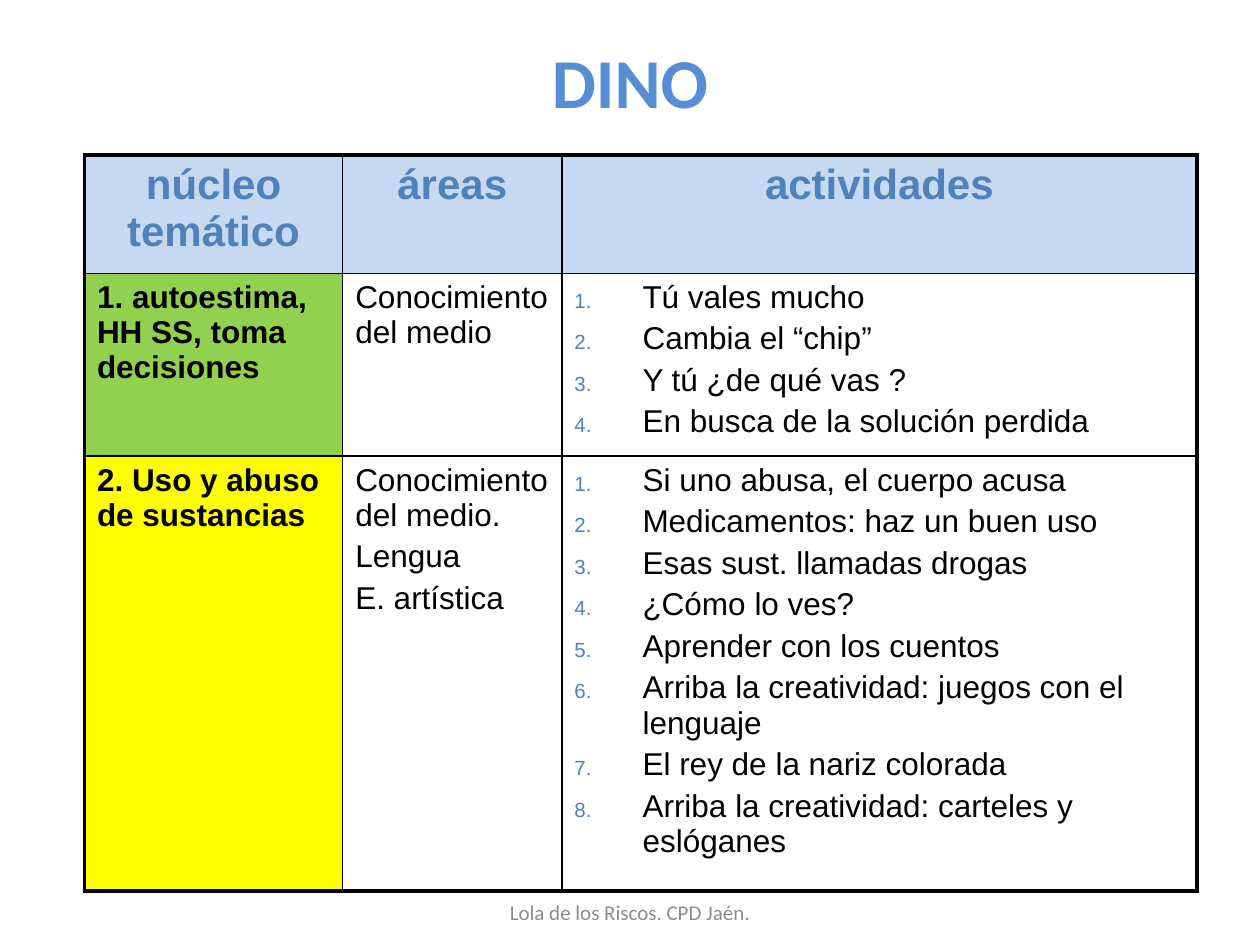
from lxml import etree
from pptx import Presentation
from pptx import util as u
from pptx.dml.color import RGBColor
from pptx.enum import text
from pptx.oxml import ns

WIDTH, HEIGHT = u.Inches(10), u.Inches(7.5)
COLORS = {
    "title": "558ED5", "accent": "4F81BD", "header": "C6D9F1", "green": "92D050",
    "yellow": "FFFF00", "black": "000000", "footer": "8C8C8C",
}
COLUMN_WIDTHS = [2.05, 1.74, 5.04]
ROW_HEIGHTS = [0.94, 1.33, 2.61]
OUTER_LINE, INNER_LINE = 2.25, 1
NUMBER_INDENT = u.Inches(0.54)

HEADERS = ["núcleo temático", "áreas", "actividades"]
# Each topic: name, fill, areas, activities
TOPICS = [
    ("1. autoestima, HH SS, toma decisiones", "green",
     ["Conocimiento del medio"],
     ["Tú vales mucho", "Cambia el “chip”", "Y tú ¿de qué vas ?",
      "En busca de la solución perdida"]),
    ("2. Uso y abuso de sustancias", "yellow",
     ["Conocimiento del medio.", "Lengua", "E. artística"],
     ["Si uno abusa, el cuerpo acusa", "Medicamentos: haz un buen uso",
      "Esas sust. llamadas drogas", "¿Cómo lo ves?", "Aprender con los cuentos",
      "Arriba la creatividad: juegos con el lenguaje",
      "El rey de la nariz colorada",
      "Arriba la creatividad: carteles y eslóganes"]),
]


def add_child(parent, tag, **attributes):
    child = etree.SubElement(parent, ns.qn(tag))
    for name, value in attributes.items():
        child.set(name, str(value))
    return child


def style(paragraph, size, color, font="Arial", bold=False, centered=False):
    paragraph.font.size = u.Pt(size)
    paragraph.font.name = font
    paragraph.font.bold = bold
    paragraph.font.color.rgb = RGBColor.from_string(COLORS[color])
    paragraph.alignment = text.PP_ALIGN.CENTER if centered else text.PP_ALIGN.LEFT


def add_label(slide, words, left, top, width, height, **look):
    """Centred text box; the box is given as shares of the slide."""
    shape = slide.shapes.add_textbox(
        int(left * WIDTH), int(top * HEIGHT), int(width * WIDTH), int(height * HEIGHT))
    frame = shape.text_frame
    frame.word_wrap = True
    frame.vertical_anchor = text.MSO_ANCHOR.MIDDLE
    frame.text = words
    style(frame.paragraphs[0], font="Calibri", centered=True, **look)


def number(paragraph):
    """Automatic small blue number with a hanging indent."""
    properties = paragraph._p.get_or_add_pPr()
    properties.set("marL", str(NUMBER_INDENT))
    properties.set("indent", str(-NUMBER_INDENT))
    bullet_color = add_child(properties, "a:buClr")
    add_child(bullet_color, "a:srgbClr", val=COLORS["accent"])
    add_child(properties, "a:buSzPct", val=65000)
    add_child(properties, "a:buFont", typeface="Arial")
    add_child(properties, "a:buAutoNum", type="arabicPeriod")


def set_borders(cell, row, column):
    """Thick line around the table, thin lines inside."""
    on_edge = {
        "a:lnL": column == 0, "a:lnR": column == len(COLUMN_WIDTHS) - 1,
        "a:lnT": row == 0, "a:lnB": row == len(ROW_HEIGHTS) - 1,
    }
    properties = cell._tc.get_or_add_tcPr()
    for tag, outer in on_edge.items():
        line = add_child(properties, tag, w=u.Pt(OUTER_LINE if outer else INNER_LINE))
        add_child(add_child(line, "a:solidFill"), "a:srgbClr", val=COLORS["black"])


def fill_cell(table, row, column, lines, fill=None, numbered=False,
              size=18, color="black", **look):
    cell = table.cell(row, column)
    set_borders(cell, row, column)
    if fill:
        cell.fill.solid()
        cell.fill.fore_color.rgb = RGBColor.from_string(COLORS[fill])
    else:
        cell.fill.background()
    cell.text = "\n".join(lines)
    for paragraph in cell.text_frame.paragraphs:
        style(paragraph, size, color, **look)
        paragraph.space_before = u.Pt(0.2 * size)
        if numbered:
            number(paragraph)


def add_topic_table(slide):
    table = slide.shapes.add_table(
        len(ROW_HEIGHTS), len(COLUMN_WIDTHS), u.Inches(0.67), u.Inches(1.23),
        u.Inches(sum(COLUMN_WIDTHS)), u.Inches(sum(ROW_HEIGHTS))).table
    table.first_row = table.horz_banding = False
    for column, width in zip(table.columns, COLUMN_WIDTHS):
        column.width = u.Inches(width)
    for row, height in zip(table.rows, ROW_HEIGHTS):
        row.height = u.Inches(height)

    for column, header in enumerate(HEADERS):
        fill_cell(table, 0, column, [header], fill="header", size=24,
                  color="accent", bold=True, centered=True)
    for row, (topic, fill, areas, activities) in enumerate(TOPICS, start=1):
        fill_cell(table, row, 0, [topic], fill=fill, bold=True)
        fill_cell(table, row, 1, areas)
        fill_cell(table, row, 2, activities, numbered=True)


def main():
    presentation = Presentation()
    presentation.slide_width, presentation.slide_height = WIDTH, HEIGHT
    slide = presentation.slides.add_slide(presentation.slide_layouts[6])

    # Title, table, footer
    add_label(slide, "DINO", 0.05, 0.04, 0.9, 0.09, size=40, color="title", bold=True)
    add_topic_table(slide)
    add_label(slide, "Lola de los Riscos. CPD Jaén.", 0.34, 0.95, 0.32, 0.03,
              size=12, color="footer")
    presentation.save("out.pptx")


if __name__ == "__main__":
    main()
